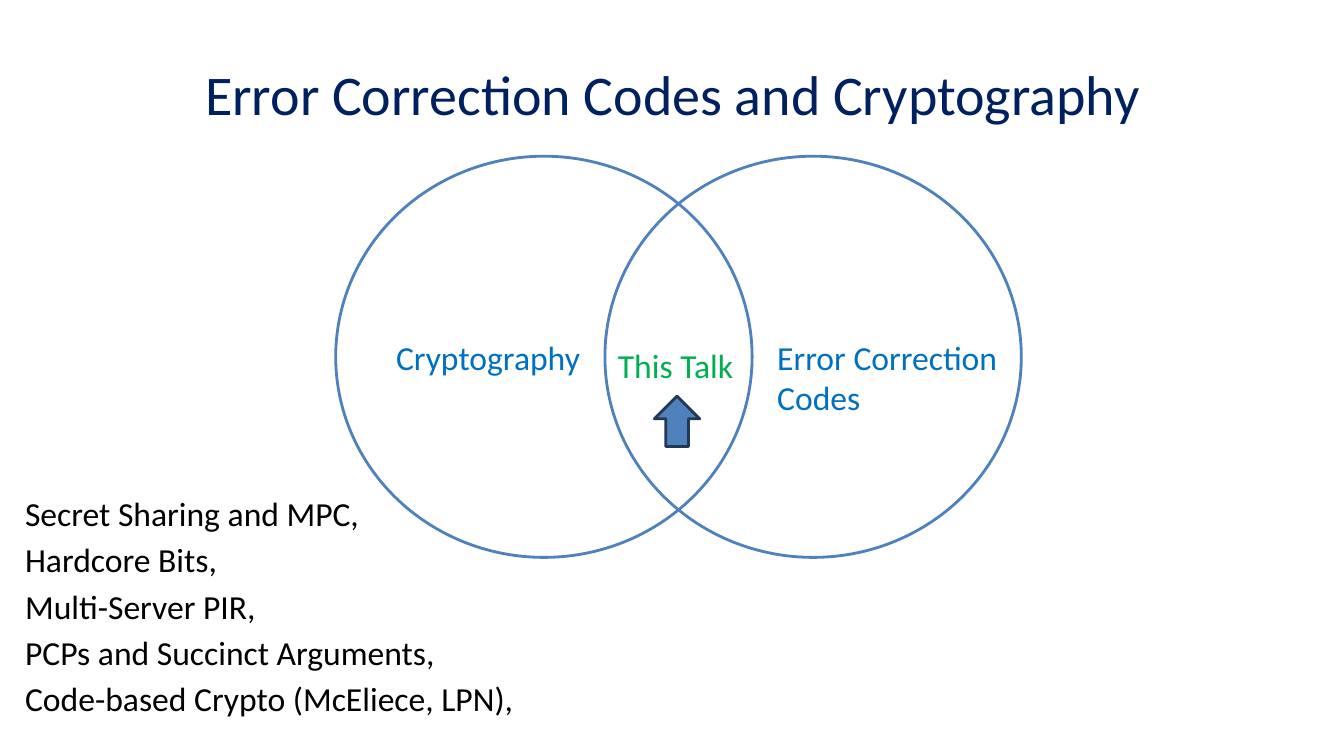
from dataclasses import dataclass

from pptx import Presentation
from pptx.dml.color import RGBColor
from pptx.enum.shapes import MSO_SHAPE
from pptx.enum.text import MSO_ANCHOR, PP_ALIGN
from pptx.shapes.autoshape import Shape
from pptx.slide import Slide
from pptx.util import Inches, Pt

OVAL, DOWN_ARROW = MSO_SHAPE.OVAL, MSO_SHAPE.DOWN_ARROW
LEFT, CENTER = PP_ALIGN.LEFT, PP_ALIGN.CENTER
TOP, MIDDLE = MSO_ANCHOR.TOP, MSO_ANCHOR.MIDDLE


@dataclass(frozen=True)
class Theme:
    font: str = "Calibri"
    title_size: float = 40
    body_size: float = 24
    paragraph_gap: float = 4.3
    line_width: float = 2
    navy: str = "002060"
    black: str = "000000"
    white: str = "FFFFFF"
    label_blue: str = "0070C0"
    talk_green: str = "00B050"
    shape_blue: str = "4F81BD"
    arrow_outline: str = "233953"


THEME = Theme()


@dataclass(frozen=True)
class Box:
    left: float
    top: float
    width: float
    height: float

    def lengths(self) -> tuple[int, int, int, int]:
        return (Inches(self.left), Inches(self.top),
                Inches(self.width), Inches(self.height))


@dataclass(frozen=True)
class Figure:
    kind: MSO_SHAPE
    box: Box
    fill: str | None
    line: str
    rotation: float = 0


@dataclass(frozen=True)
class Label:
    text: str
    box: Box
    color: str


TOPICS = [
    "Secret Sharing and MPC,",
    "Hardcore Bits,",
    "Multi-Server PIR,",
    "PCPs and Succinct Arguments,",
    "Code-based Crypto (McEliece, LPN),",
]
CODES_CIRCLE = Figure(OVAL, Box(6, 1.55, 4.13, 3.98), THEME.white, THEME.shape_blue)
CRYPTOGRAPHY_CIRCLE = Figure(OVAL, Box(3.33, 1.55, 4.13, 3.98), None, THEME.shape_blue)
TALK_ARROW = Figure(DOWN_ARROW, Box(6.49, 3.93, 0.45, 0.5), THEME.shape_blue,
                    THEME.arrow_outline, rotation=180)
LABELS = [
    Label("Cryptography", Box(3.83, 3.29, 2.34, 0.5), THEME.label_blue),
    Label("Error Correction Codes", Box(7.61, 3.29, 2.52, 0.91), THEME.label_blue),
    Label("This Talk", Box(6.03, 3.37, 1.56, 0.5), THEME.talk_green),
]


def add_text(slide: Slide, lines: list[str], box: Box, *, color: str,
             size: float = THEME.body_size, align: PP_ALIGN = LEFT,
             anchor: MSO_ANCHOR = TOP, gap: float = 0) -> Shape:
    """Add a wrapping text box with one paragraph per line."""
    shape = slide.shapes.add_textbox(*box.lengths())
    frame = shape.text_frame
    frame.word_wrap = True
    frame.vertical_anchor = anchor
    for index, line in enumerate(lines):
        paragraph = frame.add_paragraph() if index else frame.paragraphs[0]
        paragraph.text = line
        paragraph.alignment = align
        paragraph.space_before = Pt(gap if index else 0)
        font = paragraph.runs[0].font
        font.name = THEME.font
        font.size = Pt(size)
        font.color.rgb = RGBColor.from_string(color)
    return shape


def add_figure(slide: Slide, figure: Figure) -> Shape:
    shape = slide.shapes.add_shape(figure.kind, *figure.box.lengths())
    shape.shadow.inherit = False
    shape.rotation = figure.rotation
    if figure.fill is None:
        shape.fill.background()
    else:
        shape.fill.solid()
        shape.fill.fore_color.rgb = RGBColor.from_string(figure.fill)
    shape.line.color.rgb = RGBColor.from_string(figure.line)
    shape.line.width = Pt(THEME.line_width)
    return shape


def main() -> None:
    presentation = Presentation()
    presentation.slide_width = Inches(13.33)
    presentation.slide_height = Inches(7.5)
    slide = presentation.slides.add_slide(presentation.slide_layouts[6])

    # Title and topic list
    add_text(slide, ["Error Correction Codes and Cryptography"],
             Box(0.67, 0.3, 12, 1.25), color=THEME.navy,
             size=THEME.title_size, align=CENTER, anchor=MIDDLE)
    add_text(slide, TOPICS, Box(0.15, 4.84, 5.58, 2.66),
             color=THEME.black, gap=THEME.paragraph_gap)

    # Overlapping circles and their labels
    for circle in (CODES_CIRCLE, CRYPTOGRAPHY_CIRCLE):
        add_figure(slide, circle)
    for label in LABELS:
        add_text(slide, [label.text], label.box, color=label.color)

    # Arrow pointing up at the overlap label
    add_figure(slide, TALK_ARROW)

    presentation.save("out.pptx")


if __name__ == "__main__":
    main()
